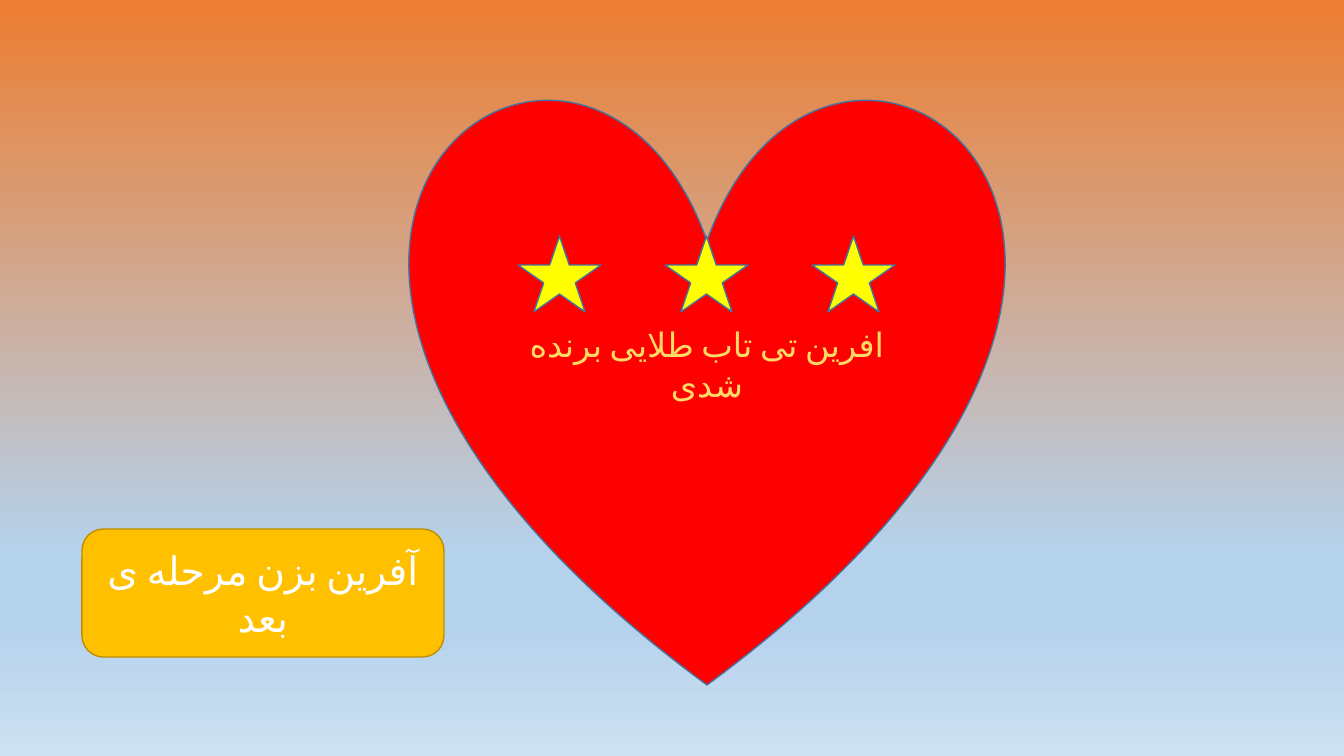
from lxml.etree import SubElement
from pptx import Presentation
from pptx.dml.color import RGBColor
from pptx.enum.shapes import MSO_SHAPE as SHAPE
from pptx.enum.text import MSO_ANCHOR, PP_ALIGN
from pptx.oxml.ns import qn
from pptx.util import Pt

SLIDE = (1344, 756)
STOPS = [(0, "ED7D31"), (73, "B5D2EC"), (83, "B5D2EC"), (100, "CEE1F2")]
FONT = "Calibri"
HEART = dict(box=(411, 93, 592, 592), fill="FF0000", line="43739E",
             text="افرین تی تاب طلایی برنده شدی", size=24, color="FFD966")
STAR = dict(fill="FFFF00", line="43739E")
STAR_BOX = (518, 236, 83, 76)
STAR_COUNT = 3
STAR_STEP = 147
BUTTON = dict(box=(82, 529, 362, 128), fill="FFC000", line="BD8E00",
              text="آفرین بزن مرحله ی بعد", size=28, color="FFFFFF")


def px(n):
    return round(n * 914400 / 100.8)


def rgb(value):
    return RGBColor.from_string(value)


def add_gradient(s):
    fill = s.background.fill
    fill.gradient()
    fill.gradient_angle = 270
    stops = s.element.xpath(".//a:gsLst")[0]
    for old in list(stops):
        stops.remove(old)
    for percent, color in STOPS:
        stop = SubElement(stops, qn("a:gs"), pos=str(percent * 1000))
        SubElement(stop, qn("a:srgbClr"), val=color)


def add_figure(s, kind, box, fill, line, text=None, size=None, color=None):
    sp = s.shapes.add_shape(kind, *map(px, box))
    sp.shadow.inherit = False
    sp.fill.solid()
    sp.fill.fore_color.rgb = rgb(fill)
    sp.line.color.rgb = rgb(line)
    sp.line.width = Pt(1)
    if text:
        tf = sp.text_frame
        tf.word_wrap = True
        tf.vertical_anchor = MSO_ANCHOR.MIDDLE
        p = tf.paragraphs[0]
        p.text = text
        p.alignment = PP_ALIGN.CENTER
        p.font.name = FONT
        p.font.size = Pt(size)
        p.font.color.rgb = rgb(color)
        for props in sp.element.xpath(".//a:defRPr | .//a:r/a:rPr"):
            SubElement(props, qn("a:cs"), typeface=FONT)
        for r in p.runs:
            props = r.font
            props.name = FONT
        for props in sp.element.xpath(".//a:r/a:rPr"):
            props.set("lang", "fa-IR")
            SubElement(props, qn("a:cs"), typeface=FONT)


def main():
    prs = Presentation()
    prs.slide_width, prs.slide_height = map(px, SLIDE)
    s = prs.slides.add_slide(prs.slide_layouts[6])
    add_gradient(s)
    add_figure(s, SHAPE.HEART, **HEART)
    left, top, width, height = STAR_BOX
    for i in range(STAR_COUNT):
        box = (left + i * STAR_STEP, top, width, height)
        add_figure(s, SHAPE.STAR_5_POINT, box, **STAR)
    add_figure(s, SHAPE.ROUNDED_RECTANGLE, **BUTTON)
    prs.save("out.pptx")


if __name__ == "__main__":
    main()
